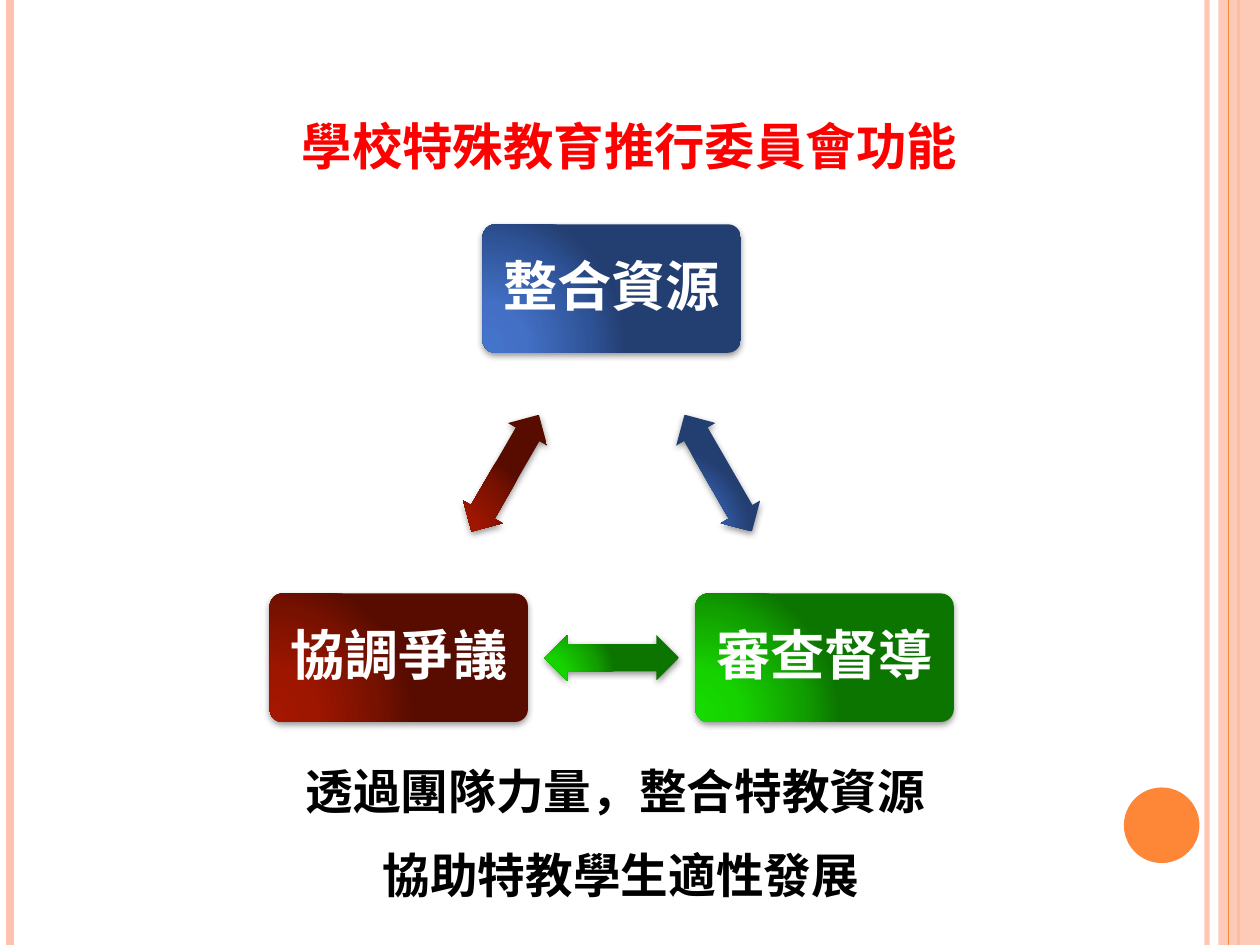
from math import atan2, degrees

from lxml.etree import SubElement
from pptx import Presentation
from pptx.dml.color import RGBColor
from pptx.enum.shapes import MSO_CONNECTOR, MSO_SHAPE
from pptx.enum.text import MSO_ANCHOR, PP_ALIGN
from pptx.oxml import parse_xml
from pptx.oxml.ns import nsdecls, qn
from pptx.util import Inches, Pt

FONT = "Noto Sans CJK SC"
COLORS = {
    "peach": "FEC3AE",
    "orange": "FE8637",
    "title": "FF0000",
    "body": "000000",
    "label": "FFFFFF",
    "shadow": "000000",
}
# Gradient colours at each of the stops, from light to dark
STOPS = (0, 30, 75, 100)
GRADIENTS = {
    "blue": ("4574CC", "4370C5", "2F5397", "233E70"),
    "green": ("17DB00", "16D300", "119E00", "0C7500"),
    "red": ("A41700", "9F1600", "771100", "580C00"),
}
SLIDE_W, SLIDE_H = 10, 7.5
BOX_W, BOX_H = 2.05, 1.02
ARROW_W, ARROW_H = 1.07, 0.36

# Label, gradient and centre of each function, clockwise from the top
FUNCTIONS = [
    ("整合資源", "blue", 4.855, 2.29),
    ("審查督導", "green", 6.545, 5.22),
    ("協調爭議", "red", 3.165, 5.22),
]


def rgb(name):
    return RGBColor.from_string(COLORS[name])


def set_alpha(solid_fill, percent):
    SubElement(solid_fill[0], qn("a:alpha")).set("val", str(percent * 1000))


def add_stripe(slide, x, color, width, alpha=None):
    stripe = slide.shapes.add_connector(
        MSO_CONNECTOR.STRAIGHT, Inches(x), 0, Inches(x), Inches(SLIDE_H))
    stripe.line.color.rgb = rgb(color)
    stripe.line.width = Pt(width)
    properties = stripe._element.spPr
    SubElement(properties, qn("a:effectLst"))
    if alpha:
        set_alpha(properties.find(".//" + qn("a:solidFill")), alpha)


def add_flat_shape(slide, kind, left, top, width, height, color, alpha=None):
    shape = slide.shapes.add_shape(
        kind, Inches(left), Inches(top), Inches(width), Inches(height))
    shape.shadow.inherit = False
    shape.fill.solid()
    shape.fill.fore_color.rgb = rgb(color)
    shape.line.fill.background()
    if alpha:
        set_alpha(shape._element.spPr.find(qn("a:solidFill")), alpha)


def add_glossy_shape(slide, kind, center_x, center_y, width, height, gradient):
    """Add a shape with a radial gradient and a soft shadow below it."""
    shape = slide.shapes.add_shape(
        kind, Inches(center_x - width / 2), Inches(center_y - height / 2),
        Inches(width), Inches(height))
    shape.line.fill.background()
    shape.shadow.inherit = False
    stops = "".join(
        f'<a:gs pos="{stop * 1000}"><a:srgbClr val="{color}"/></a:gs>'
        for stop, color in zip(STOPS, GRADIENTS[gradient]))
    properties = shape._element.spPr
    properties.find(qn("a:prstGeom")).addnext(parse_xml(
        f'<a:gradFill {nsdecls("a")} rotWithShape="1"><a:gsLst>{stops}</a:gsLst>'
        '<a:path path="circle"><a:fillToRect l="5000" t="100000" r="120000"'
        ' b="10000"/></a:path></a:gradFill>'))
    properties.find(qn("a:effectLst")).append(parse_xml(
        f'<a:outerShdw {nsdecls("a")} blurRad="{Pt(4)}" dist="{Pt(1.6)}"'
        f' dir="5400000" rotWithShape="0"><a:srgbClr val="{COLORS["shadow"]}">'
        '<a:alpha val="42000"/></a:srgbClr></a:outerShdw>'))
    return shape


def style_paragraph(paragraph, text, size, color):
    paragraph.text = text
    paragraph.alignment = PP_ALIGN.CENTER
    font = paragraph.font
    font.size, font.bold, font.name = Pt(size), True, FONT
    font.color.rgb = rgb(color)
    # East Asian glyphs take their typeface from a:ea
    SubElement(font._element, qn("a:ea")).set("typeface", FONT)


def add_text_frame(slide, left, top, width, height):
    frame = slide.shapes.add_textbox(
        Inches(left), Inches(top), Inches(width), Inches(height)).text_frame
    frame.word_wrap = True
    return frame


def add_function_box(slide, label, gradient, center_x, center_y):
    box = add_glossy_shape(slide, MSO_SHAPE.ROUNDED_RECTANGLE,
                           center_x, center_y, BOX_W, BOX_H, gradient)
    box.adjustments[0] = 0.1
    frame = box.text_frame
    frame.word_wrap = False
    frame.vertical_anchor = MSO_ANCHOR.MIDDLE
    frame.margin_left = frame.margin_right = Inches(0.13)
    frame.margin_top = frame.margin_bottom = Inches(0.13)
    paragraph = frame.paragraphs[0]
    style_paragraph(paragraph, label, 31, "label")
    paragraph.line_spacing = 0.9
    paragraph.space_after = Pt(11)


def add_function_arrow(slide, gradient, start, end):
    """Add a double arrow halfway between two box centres."""
    (x1, y1), (x2, y2) = start, end
    arrow = add_glossy_shape(slide, MSO_SHAPE.LEFT_RIGHT_ARROW, (x1 + x2) / 2,
                             (y1 + y2) / 2, ARROW_W, ARROW_H, gradient)
    arrow.adjustments[0], arrow.adjustments[1] = 0.6, 0.5
    arrow.rotation = round(degrees(atan2(y2 - y1, x2 - x1))) % 360


def add_title(slide, text):
    frame = add_text_frame(slide, 0.91, 0.21, 8.17, 1.25)
    frame.vertical_anchor = MSO_ANCHOR.BOTTOM
    paragraph = frame.paragraphs[0]
    style_paragraph(paragraph, text, 36, "title")
    paragraph.runs[0].font._element.set("cap", "small")


def add_summary(slide, lines):
    frame = add_text_frame(slide, 1.38, 5.86, 7.01, 1.42)
    for index, line in enumerate(lines):
        paragraph = frame.add_paragraph() if index else frame.paragraphs[0]
        style_paragraph(paragraph, line, 27.2, "body")
        paragraph.line_spacing = 1.3
        paragraph.space_before = Pt(5.4)


def main():
    prs = Presentation()
    prs.slide_width, prs.slide_height = Inches(SLIDE_W), Inches(SLIDE_H)
    slide = prs.slides.add_slide(prs.slide_layouts[6])

    # Side decoration
    add_stripe(slide, 9.58, "peach", 3, alpha=93)
    add_stripe(slide, 0.08, "peach", 4.5)
    add_stripe(slide, 9.83, "orange", 1.5)
    add_flat_shape(slide, MSO_SHAPE.RECTANGLE, 9.67, 0, 0.33, SLIDE_H,
                   "peach", alpha=87)
    add_stripe(slide, 9.75, "orange", 0.75)
    add_flat_shape(slide, MSO_SHAPE.OVAL, 8.92, 6.25, 0.6, 0.6, "orange")

    # Title and summary
    add_title(slide, "學校特殊教育推行委員會功能")
    add_summary(slide, ["透過團隊力量，整合特教資源", " 協助特教學生適性發展"])

    # Cycle of functions, each with an arrow to the next
    for index, (label, gradient, x, y) in enumerate(FUNCTIONS):
        next_center = FUNCTIONS[(index + 1) % len(FUNCTIONS)][2:]
        add_function_box(slide, label, gradient, x, y)
        add_function_arrow(slide, gradient, (x, y), next_center)

    prs.save("out.pptx")


if __name__ == "__main__":
    main()
